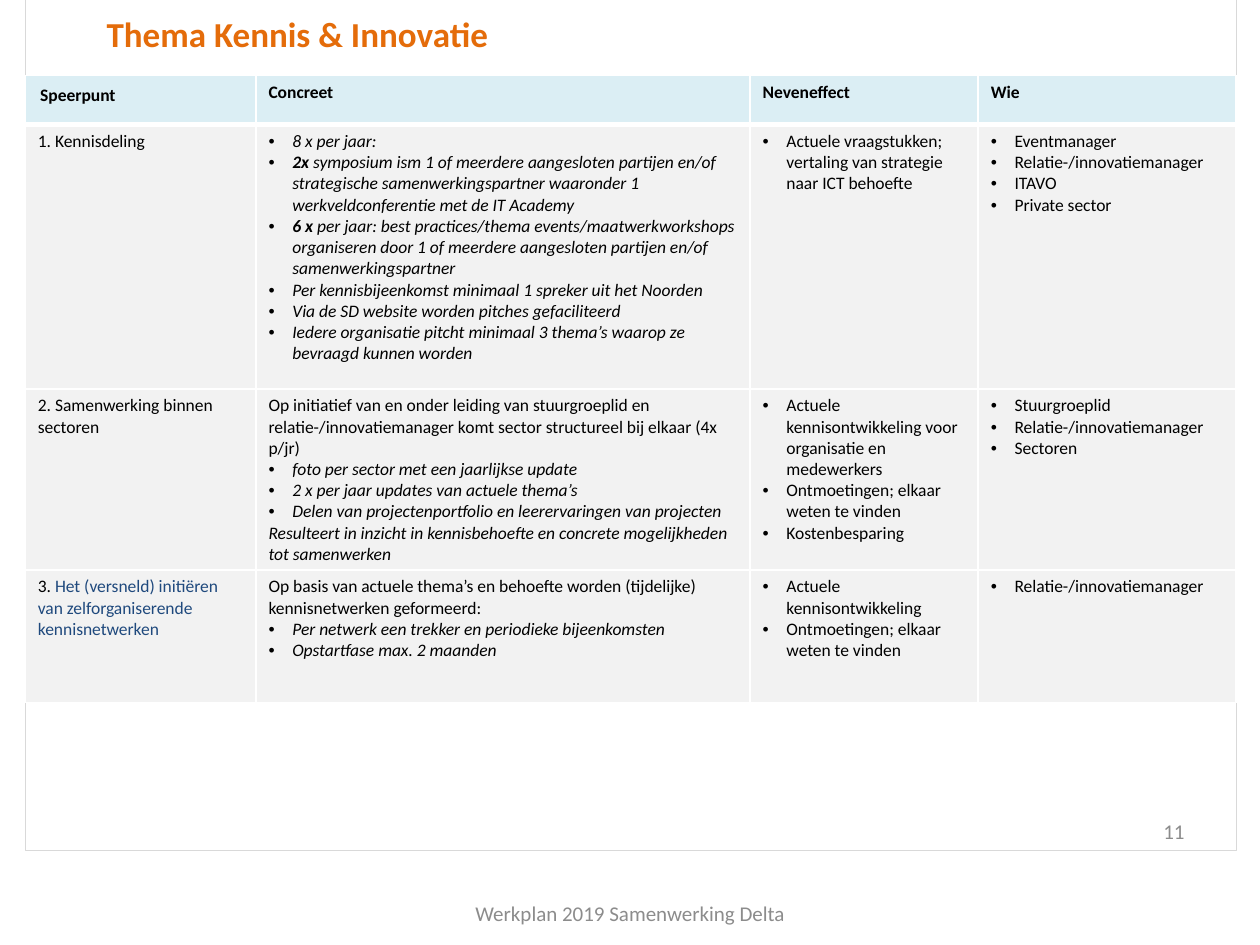
import pptx
import pptx.dml.color
import pptx.enum.shapes
import pptx.enum.text
import pptx.oxml
import pptx.oxml.ns
import pptx.util
from pptx.util import Cm

COLORS = {
    "title": "E46C0A",
    "text": "000000",
    "accent": "1F497D",
    "footer": "8C8C8C",
    "header": "DBEEF4",
    "body": "F2F2F2",
    "border": "FFFFFF",
    "frame": "D9D9D9",
}
ALIGN = pptx.enum.text.PP_ALIGN
ANCHOR = pptx.enum.text.MSO_ANCHOR
INDENT = Cm(0.48)
COL_WIDTHS = [4.65, 9.96, 4.6, 5.2]
ROW_HEIGHTS = [0.99, 5.33, 3.65, 2.67]


def rgb(name):
    return pptx.dml.color.RGBColor.from_string(COLORS[name])


def add_run(p, text, size=10, bold=False, italic=False, color="text"):
    r = p.add_run()
    r.text = text
    r.font.name = "Calibri"
    r.font.size = pptx.util.Pt(size)
    r.font.bold = bold
    r.font.italic = italic
    r.font.color.rgb = rgb(color)


def para(*runs, bullet=False, **fmt):
    """Describe a paragraph; a run is a string or a (string, format) pair."""
    pairs = [(r, {}) if isinstance(r, str) else r for r in runs]
    return bullet, [(text, {**fmt, **own}) for text, own in pairs]


def bullets(*items, **fmt):
    return [para(item, bullet=True, **fmt) for item in items]


def set_bullet(p):
    pPr = p._p.get_or_add_pPr()
    pPr.set("marL", str(INDENT))
    pPr.set("indent", str(-INDENT))
    ns = pptx.oxml.ns.nsdecls("a")
    pPr.append(pptx.oxml.parse_xml(f'<a:buFont {ns} typeface="Arial"/>'))
    pPr.append(pptx.oxml.parse_xml(f'<a:buChar {ns} char="•"/>'))


def write(tf, paragraphs):
    for i, (bullet, runs) in enumerate(paragraphs):
        p = tf.paragraphs[0] if i == 0 else tf.add_paragraph()
        if bullet:
            set_bullet(p)
        for text, fmt in runs:
            add_run(p, text, **fmt)


def add_text(s, box, text, align=ALIGN.LEFT, anchor=ANCHOR.TOP, **fmt):
    tf = s.shapes.add_textbox(*map(Cm, box)).text_frame
    tf.word_wrap = True
    tf.vertical_anchor = anchor
    write(tf, [para(text, **fmt)])
    tf.paragraphs[0].alignment = align


def add_frame(s):
    sp = s.shapes.add_shape(pptx.enum.shapes.MSO_SHAPE.RECTANGLE,
                            Cm(0.51), Cm(-1.07), Cm(24.41), Cm(18.21))
    sp.shadow.inherit = False
    sp.fill.background()
    sp.line.color.rgb = rgb("frame")
    sp.line.width = pptx.util.Pt(0.25)


def set_borders(cell, **widths):
    """Draw the cell's borders, with widths in points by side (L, R, T, B)."""
    tcPr = cell._tc.get_or_add_tcPr()
    for side, width in widths.items():
        tcPr.append(pptx.oxml.parse_xml(
            f'<a:ln{side} {pptx.oxml.ns.nsdecls("a")} w="{pptx.util.Pt(width)}">'
            f'<a:solidFill><a:srgbClr val="{COLORS["border"]}"/></a:solidFill>'
            f'</a:ln{side}>'))


def add_table(s, rows):
    table = s.shapes.add_table(len(rows), len(COL_WIDTHS), Cm(0.51), Cm(1.52),
                               Cm(sum(COL_WIDTHS)), Cm(sum(ROW_HEIGHTS))).table
    for col, width in zip(table.columns, COL_WIDTHS):
        col.width = Cm(width)
    for row, height in zip(table.rows, ROW_HEIGHTS):
        row.height = Cm(height)
    for i, row in enumerate(rows):
        for j, paragraphs in enumerate(row):
            cell = table.cell(i, j)
            set_borders(cell, L=1, R=1, T=3 if i == 1 else 1, B=3 if i == 0 else 1)
            cell.fill.solid()
            cell.fill.fore_color.rgb = rgb("body" if i else "header")
            write(cell.text_frame, paragraphs)
    first = table.cell(0, 0)
    first.margin_left, first.margin_top = Cm(0.3), Cm(0.2)
    first.margin_right, first.margin_bottom = Cm(0.5), Cm(0.13)


def table_rows():
    strong = {"bold": True}
    header = [[para(name, bold=True)]
              for name in ("Speerpunt", "Concreet", "Neveneffect", "Wie")]
    sharing = [
        [para("1. Kennisdeling")],
        bullets("8 x per jaar:", italic=True)
        + [para(("2x ", strong),
                "symposium ism 1 of meerdere aangesloten partijen en/of strategische "
                "samenwerkingspartner waaronder 1 werkveldconferentie met de IT Academy",
                bullet=True, italic=True),
           para(("6 x ", strong),
                "per jaar: best practices/thema events/maatwerkworkshops organiseren "
                "door 1 of meerdere aangesloten partijen en/of samenwerkingspartner",
                bullet=True, italic=True)]
        + bullets("Per kennisbijeenkomst minimaal 1 spreker uit het Noorden",
                  "Via de SD website worden pitches gefaciliteerd",
                  "Iedere organisatie pitcht minimaal 3 thema’s waarop ze bevraagd "
                  "kunnen worden", italic=True),
        bullets("Actuele vraagstukken; vertaling van strategie naar ICT behoefte"),
        bullets("Eventmanager", "Relatie-/innovatiemanager", "ITAVO", "Private sector"),
    ]
    sectors = [
        [para("2. Samenwerking binnen sectoren")],
        [para("Op initiatief van en onder leiding van stuurgroeplid en "
              "relatie-/innovatiemanager komt sector structureel bij elkaar (4x p/jr)")]
        + bullets("foto per sector met een jaarlijkse update",
                  "2 x per jaar updates van actuele thema’s",
                  "Delen van projectenportfolio en leerervaringen van projecten",
                  italic=True)
        + [para("Resulteert in inzicht in kennisbehoefte en concrete mogelijkheden "
                "tot samenwerken", italic=True)],
        bullets("Actuele kennisontwikkeling voor organisatie en medewerkers",
                "Ontmoetingen; elkaar weten te vinden", "Kostenbesparing"),
        bullets("Stuurgroeplid", "Relatie-/innovatiemanager", "Sectoren"),
    ]
    networks = [
        [para("3. ", ("Het (versneld) initiëren van zelforganiserende kennisnetwerken",
                      {"color": "accent"}))],
        [para("Op basis van actuele thema’s en behoefte worden (tijdelijke) "
              "kennisnetwerken geformeerd:")]
        + bullets("Per netwerk een trekker en periodieke bijeenkomsten",
                  "Opstartfase max. 2 maanden", italic=True),
        bullets("Actuele kennisontwikkeling", "Ontmoetingen; elkaar weten te vinden"),
        bullets("Relatie-/innovatiemanager"),
    ]
    return [header, sharing, sectors, networks]


def main():
    prs = pptx.Presentation()
    prs.slide_width, prs.slide_height = Cm(25.4), Cm(19.05)
    s = prs.slides.add_slide(prs.slide_layouts[6])
    add_frame(s)
    add_text(s, (1.9, 0.13, 22, 1.96), "Thema Kennis & Innovatie",
             size=20, bold=True, color="title")
    add_table(s, table_rows())
    add_text(s, (18.2, 16.25, 5.93, 1.01), "11", align=ALIGN.RIGHT,
             anchor=ANCHOR.MIDDLE, size=12, color="footer")
    add_text(s, (8.68, 17.9, 8.05, 1.01), "Werkplan 2019 Samenwerking Delta",
             align=ALIGN.CENTER, anchor=ANCHOR.MIDDLE, size=12, color="footer")
    prs.save("out.pptx")


if __name__ == "__main__":
    main()
